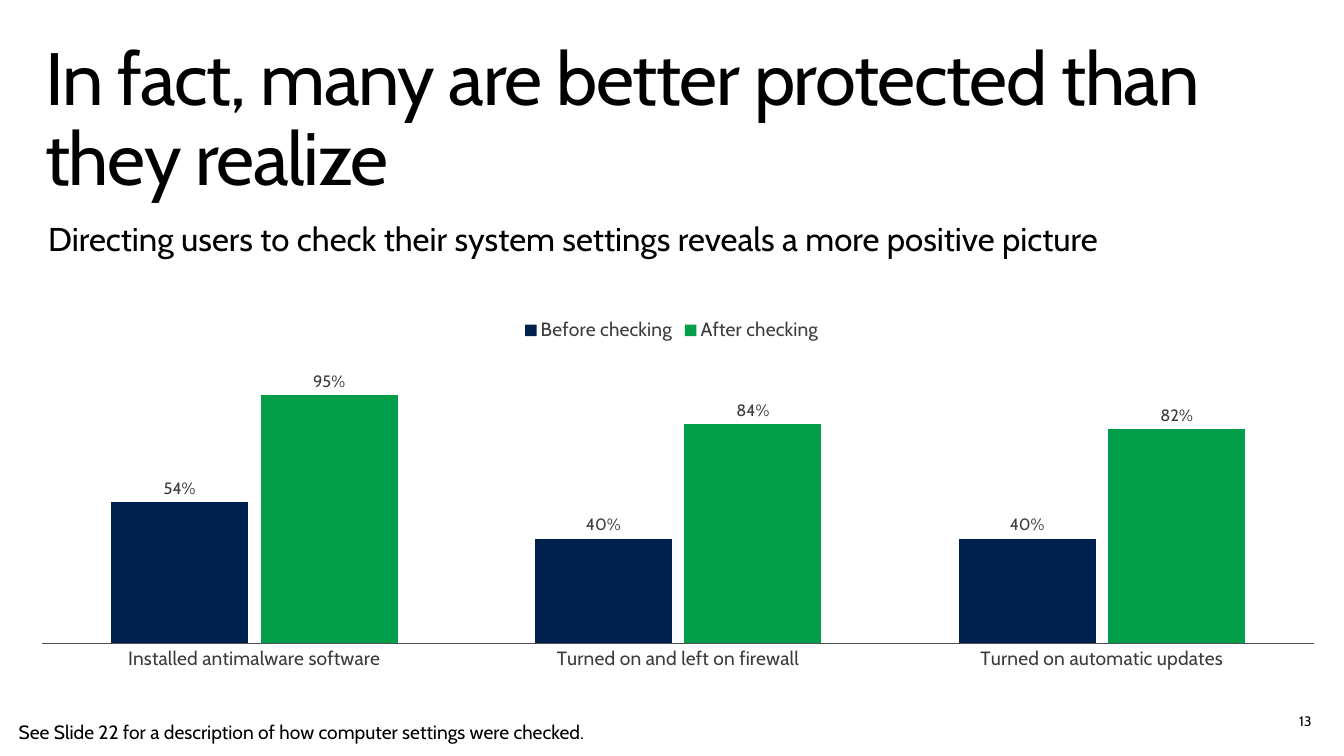
import lxml.etree
import pptx
import pptx.chart.data
import pptx.dml.color
import pptx.enum.chart
import pptx.enum.text
import pptx.oxml
import pptx.oxml.ns
import pptx.util

PX = 9144
FONT = "Cabin"
COLORS = {
    "text": "000000",
    "label": "3C3C3C",
    "axis": "505050",
    "chart": "FFFFFF",
    "before": "002050",
    "after": "009E49",
}
CATEGORIES = [
    "Installed antimalware software",
    "Turned on and left on firewall",
    "Turned on automatic updates",
]
RESULTS = [
    ("Before checking", (0.54, 0.40, 0.40), "before"),
    ("After checking", (0.95, 0.84, 0.82), "after"),
]
PLOT_AREA = {"x": 0.01, "y": 0.19, "w": 0.99, "h": 0.66}


def px(length):
    """Turn px into EMU."""
    return pptx.util.Emu(length * PX)


def rgb(color):
    """Look up a named colour."""
    return pptx.dml.color.RGBColor.from_string(COLORS[color])


def style_font(font, size, color):
    """Set typeface, size and colour of a font."""
    font.name = FONT
    font.size = pptx.util.Pt(size)
    font.color.rgb = rgb(color)


def add_text(slide, box, text, size, inset=(10, 5)):
    """Add a wrapped one-paragraph text box and return its frame."""
    frame = slide.shapes.add_textbox(*map(px, box)).text_frame
    frame.word_wrap = True
    frame.margin_left = frame.margin_right = px(inset[0])
    frame.margin_top = frame.margin_bottom = px(inset[1])
    paragraph = frame.paragraphs[0]
    paragraph.text = text
    style_font(paragraph.font, size, "text")
    return frame


def add_title(slide, box, text):
    """Add the tightly spaced headline."""
    headline = add_text(slide, box, text, 54, (16, 10)).paragraphs[0]
    headline.line_spacing = 0.9
    for run in headline.runs:
        run._r.get_or_add_rPr().set("spc", "-100")


def place_plot(chart):
    """Fix the inner plot area within the chart."""
    plot_area = chart._chartSpace.chart.plotArea
    for old_layout in plot_area.findall(pptx.oxml.ns.qn("c:layout")):
        plot_area.remove(old_layout)
    layout = pptx.oxml.parse_xml(
        "<c:layout %s><c:manualLayout/></c:layout>" % pptx.oxml.ns.nsdecls("c")
    )
    settings = [("layoutTarget", "inner"), ("xMode", "edge"), ("yMode", "edge")]
    for tag, value in settings + list(PLOT_AREA.items()):
        setting = lxml.etree.SubElement(layout[0], pptx.oxml.ns.qn("c:" + tag))
        setting.set("val", str(value))
    plot_area.insert(0, layout)


def style_axes(chart):
    """Show the category baseline and hide the value axis."""
    none = pptx.enum.chart.XL_TICK_MARK.NONE
    for axis in (chart.category_axis, chart.value_axis):
        axis.major_tick_mark = axis.minor_tick_mark = none
        axis.has_major_gridlines = False
    style_font(chart.category_axis.tick_labels.font, 14, "label")
    baseline = chart.category_axis.format.line
    baseline.color.rgb = rgb("axis")
    baseline.width = pptx.util.Pt(0.75)
    values = chart.value_axis
    values.minimum_scale, values.maximum_scale = 0, 1
    values.tick_label_position = pptx.enum.chart.XL_TICK_LABEL_POSITION.NONE
    values.format.line.fill.background()


def style_bars(series, color):
    """Colour one series and label its bars."""
    series.smooth = False
    series.invert_if_negative = False
    series.format.fill.solid()
    series.format.fill.fore_color.rgb = rgb(color)
    labels = series.data_labels
    labels.show_value = True
    labels.number_format = "0%"
    labels.number_format_is_linked = False
    labels.position = pptx.enum.chart.XL_LABEL_POSITION.OUTSIDE_END
    style_font(labels.font, 12, "label")


def add_column_chart(slide, box):
    """Add the clustered columns comparing both checks."""
    data = pptx.chart.data.CategoryChartData(number_format="0%")
    data.categories = CATEGORIES
    for name, shares, _ in RESULTS:
        data.add_series(name, shares)
    kind = pptx.enum.chart.XL_CHART_TYPE.COLUMN_CLUSTERED
    chart = slide.shapes.add_chart(kind, *map(px, box), data).chart
    style_font(chart.font, 10, "chart")
    chart.has_title = False
    chart.has_legend = True
    chart.legend.position = pptx.enum.chart.XL_LEGEND_POSITION.TOP
    chart.legend.include_in_layout = False
    style_font(chart.legend.font, 14, "label")
    columns = chart.plots[0]
    columns.vary_by_categories = False
    columns.gap_width = 100
    columns.overlap = -9
    for series, (_, _, color) in zip(columns.series, RESULTS):
        style_bars(series, color)
    style_axes(chart)
    place_plot(chart)


def main():
    """Build the slide and save it."""
    deck = pptx.Presentation()
    deck.slide_width, deck.slide_height = px(1360), px(765)
    slide = deck.slides.add_slide(deck.slide_layouts[6])
    add_title(
        slide,
        (30, 32, 1300, 161),
        "In fact, many are better protected than \vthey realize",
    )
    add_column_chart(slide, (30, 311, 1300, 400))
    add_text(
        slide,
        (39, 216, 1170, 50),
        "Directing users to check their system settings reveals a more positive picture",
        24,
    )
    page_number = add_text(slide, (1020, 709, 317, 41), "13", 10)
    page_number.vertical_anchor = pptx.enum.text.MSO_ANCHOR.MIDDLE
    page_number.paragraphs[0].alignment = pptx.enum.text.PP_ALIGN.RIGHT
    add_text(
        slide,
        (9, 724, 1170, 34),
        "See Slide 22 for a description of how computer settings were checked.",
        14,
    )
    deck.save("out.pptx")


if __name__ == "__main__":
    main()
